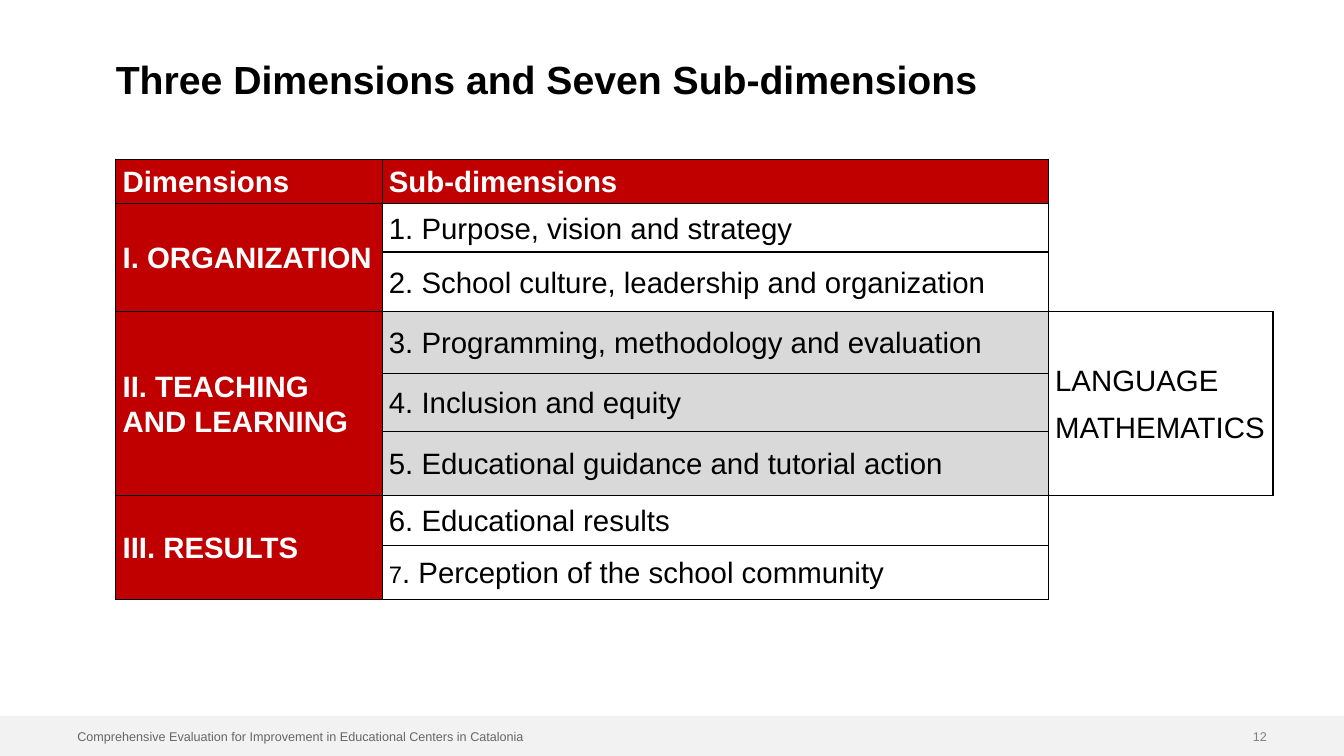
from dataclasses import dataclass

import pptx
import pptx.dml.color
import pptx.enum.shapes
import pptx.enum.text
import pptx.oxml
import pptx.oxml.ns
import pptx.util
from pptx.util import Cm


@dataclass(frozen=True)
class Theme:
    font: str = "Arial"
    black: str = "000000"
    white: str = "FFFFFF"
    red: str = "C00000"
    shade: str = "D9D9D9"
    band: str = "F2F2F2"
    footer: str = "666666"
    number: str = "808080"
    title_size: int = 28
    table_size: int = 21
    small_size: int = 17
    footer_size: int = 9


THEME = Theme()
ALIGN = pptx.enum.text.PP_ALIGN
ANCHOR = pptx.enum.text.MSO_ANCHOR

ALL_SIDES = "LRTB"
COLUMN_WIDTHS = [6.71, 16.79, 5.66]
ROW_HEIGHTS = [1.12, 1.22, 1.5, 1.57, 1.45, 1.62, 1.25, 1.36]
SUBJECT_BORDERS = ["L", "L", "LB", *[ALL_SIDES] * 3, "LT", "L"]
DIMENSIONS = [
    ("I. ORGANIZATION", [
        "1. Purpose, vision and strategy",
        "2. School culture, leadership and organization",
    ], []),
    ("II. TEACHING AND LEARNING", [
        "3. Programming, methodology and evaluation",
        "4. Inclusion and equity",
        "5. Educational guidance and tutorial action",
    ], ["LANGUAGE", "MATHEMATICS"]),
    ("III. RESULTS", [
        "6. Educational results",
        "7. Perception of the school community",
    ], []),
]


def rgb(color):
    return pptx.dml.color.RGBColor.from_string(color)


def format_run(run, size, color, bold=False):
    run.font.name = THEME.font
    run.font.size = pptx.util.Pt(size)
    run.font.bold = bold
    run.font.color.rgb = rgb(color)


def write_line(shape, text, box, size, color, bold=False, align=ALIGN.LEFT):
    shape.left, shape.top, shape.width, shape.height = (Cm(value) for value in box)
    frame = shape.text_frame
    frame.text = text
    frame.word_wrap = True
    frame.auto_size = pptx.enum.text.MSO_AUTO_SIZE.NONE
    frame.vertical_anchor = ANCHOR.TOP
    frame.margin_left = frame.margin_right = frame.margin_top = frame.margin_bottom = 0
    paragraph = frame.paragraphs[0]
    paragraph.alignment = align
    paragraph.line_spacing = 0.9
    paragraph.space_before = pptx.util.Pt(0)
    format_run(paragraph.runs[0], size, color, bold)
    return paragraph


def remove_bullet(paragraph):
    properties = paragraph._p.get_or_add_pPr()
    properties.set("marL", "0")
    properties.set("indent", "0")
    properties.append(pptx.oxml.parse_xml(
        f'<a:buNone {pptx.oxml.ns.nsdecls("a")}/>'))


def add_footer_band(slide, width):
    band = slide.shapes.add_shape(
        pptx.enum.shapes.MSO_SHAPE.RECTANGLE, 0, Cm(18.04), width, Cm(1.01))
    band.shadow.inherit = False
    band.fill.solid()
    band.fill.fore_color.rgb = rgb(THEME.band)
    band.line.fill.background()
    band._element.getparent().insert(2, band._element)


def draw_borders(cell, sides):
    properties = cell._tc.get_or_add_tcPr()
    solid = f'<a:solidFill><a:srgbClr val="{THEME.black}"/></a:solidFill>'
    for side in ALL_SIDES:
        paint = solid if side in sides else "<a:noFill/>"
        properties.append(pptx.oxml.parse_xml(
            f'<a:ln{side} {pptx.oxml.ns.nsdecls("a")} w="12700">{paint}</a:ln{side}>'))


def style_cell(cell, sides=ALL_SIDES, fill=None):
    cell.margin_left = cell.margin_right = Cm(0.17)
    cell.margin_top = cell.margin_bottom = 0
    cell.vertical_anchor = ANCHOR.MIDDLE
    draw_borders(cell, sides)
    if fill:
        cell.fill.solid()
        cell.fill.fore_color.rgb = rgb(fill)
    else:
        cell.fill.background()


def write_cell(cell, text, color=THEME.black, bold=False):
    cell.text_frame.text = text
    for paragraph in cell.text_frame.paragraphs:
        paragraph.line_spacing = 1.07
        paragraph.space_after = pptx.util.Pt(8)
        for run in paragraph.runs:
            format_run(run, THEME.table_size, color, bold)


def shrink_number(cell):
    paragraph = cell.text_frame.paragraphs[0]
    number = paragraph.runs[0]
    rest = paragraph.add_run()
    number.text, rest.text = number.text[:1], number.text[1:]
    format_run(number, THEME.small_size, THEME.black)
    format_run(rest, THEME.table_size, THEME.black)


def add_dimension(table, first, name, topics, subjects):
    last = first + len(topics) - 1
    for row, topic in enumerate(topics, first):
        style_cell(table.cell(row, 0), fill=THEME.red)
        style_cell(table.cell(row, 1), fill=THEME.shade if subjects else None)
        write_cell(table.cell(row, 1), topic)
    table.cell(first, 0).merge(table.cell(last, 0))
    write_cell(table.cell(first, 0), name, THEME.white, True)
    if subjects:
        table.cell(first, 2).merge(table.cell(last, 2))
        write_cell(table.cell(first, 2), "\n".join(subjects))
    return last + 1


def add_dimension_table(slide):
    frame = slide.shapes.add_table(
        len(ROW_HEIGHTS), len(COLUMN_WIDTHS), Cm(2.92), Cm(4.01),
        Cm(sum(COLUMN_WIDTHS)), Cm(sum(ROW_HEIGHTS)))
    table = frame.table
    table.first_row = table.horz_banding = False
    for column, width in zip(table.columns, COLUMN_WIDTHS):
        column.width = Cm(width)
    for row, height in zip(table.rows, ROW_HEIGHTS):
        row.height = Cm(height)
    for index, heading in enumerate(["Dimensions", "Sub-dimensions"]):
        style_cell(table.cell(0, index), fill=THEME.red)
        write_cell(table.cell(0, index), heading, THEME.white, True)
    for index, sides in enumerate(SUBJECT_BORDERS):
        style_cell(table.cell(index, 2), sides)
    next_row = 1
    for name, topics, subjects in DIMENSIONS:
        next_row = add_dimension(table, next_row, name, topics, subjects)
    shrink_number(table.cell(next_row - 1, 1))


def main():
    presentation = pptx.Presentation()
    presentation.slide_width = Cm(33.87)
    presentation.slide_height = Cm(19.05)
    slide = presentation.slides.add_slide(presentation.slide_layouts[1])
    add_footer_band(slide, presentation.slide_width)
    write_line(slide.shapes.title, "Three Dimensions and Seven Sub-dimensions",
               (2.92, 1.52, 29.9, 1.19), THEME.title_size, THEME.black, bold=True)
    footer = write_line(
        slide.placeholders[1],
        "Comprehensive Evaluation for Improvement in Educational Centers in Catalonia",
        (1.95, 18.42, 13.44, 0.3), THEME.footer_size, THEME.footer)
    remove_bullet(footer)
    number = slide.shapes.add_textbox(0, 0, Cm(1), Cm(1))
    write_line(number, "12", (27.1, 18.42, 4.83, 0.33), THEME.footer_size,
               THEME.number, align=ALIGN.RIGHT)
    add_dimension_table(slide)
    presentation.save("out.pptx")


if __name__ == "__main__":
    main()
